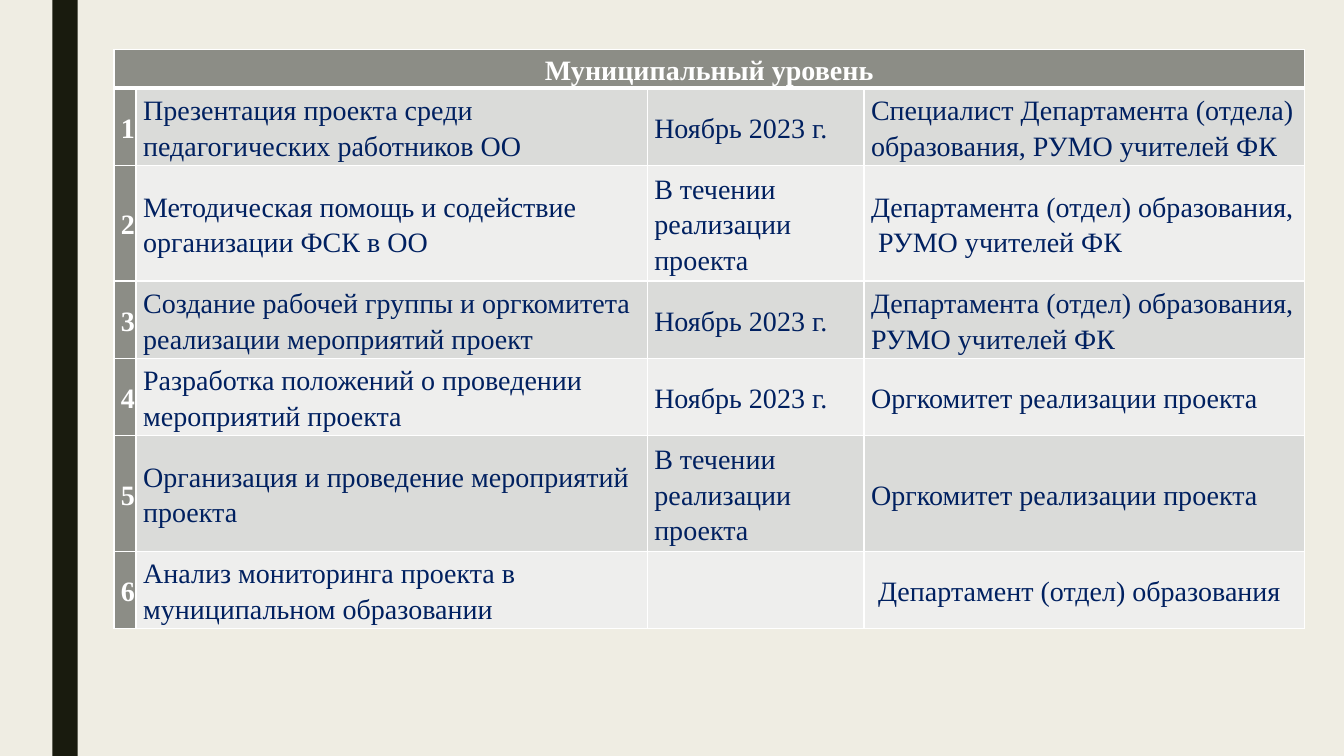
from lxml import etree
from pptx import Presentation
from pptx.dml.color import RGBColor
from pptx.enum.shapes import MSO_SHAPE
from pptx.enum.text import MSO_ANCHOR, PP_ALIGN
from pptx.oxml.ns import qn
from pptx.util import Inches, Pt

RECT = MSO_SHAPE.RECTANGLE
MIDDLE = MSO_ANCHOR.MIDDLE
LEFT, CENTER = PP_ALIGN.LEFT, PP_ALIGN.CENTER

WIDE, HIGH = 13.33, 7.5
PAPER, DARK, HEAD, INK, WHITE = "EFEDE3", "191B0E", "8C8D86", "002060", "FFFFFF"
BANDS = "DADBD9", "EEEEED"
COLS = 0.22, 5.07, 2.15, 4.37
LINE = 0.383  # height of one text line, in inches

TITLE = "Муниципальный уровень"
NOV = "Ноябрь 2023 г."
TERM = "В течении реализации проекта"
BOARD = "Оргкомитет реализации проекта"
# lines of text, task, date, who is in charge
TASKS = [
    (2, "Презентация проекта среди педагогических работников ОО", NOV,
     "Специалист Департамента (отдела) образования, РУМО учителей ФК"),
    (3, "Методическая помощь и содействие организации ФСК в ОО", TERM,
     "Департамента (отдел) образования,  РУМО учителей ФК"),
    (2, "Создание рабочей группы и оргкомитета реализации мероприятий проект", NOV,
     "Департамента (отдел) образования, РУМО учителей ФК"),
    (2, "Разработка положений о проведении мероприятий проекта", NOV, BOARD),
    (3, "Организация и проведение мероприятий проекта", TERM, BOARD),
    (2, "Анализ мониторинга проекта в муниципальном образовании", "",
     " Департамент (отдел) образования"),
]


def paint(fill, color):
    fill.solid()
    fill.fore_color.rgb = RGBColor.from_string(color)


class Page:
    font, size, space = "Times New Roman", 20, 1.15

    def __init__(self, deck):
        self.slide = deck.slides.add_slide(deck.slide_layouts[6])
        paint(self.slide.background.fill, PAPER)

    def bar(self, left, width, color):
        """Draw a band over the full height of the slide."""
        shape = self.slide.shapes.add_shape(
            RECT, Inches(left), 0, Inches(width), Inches(HIGH))
        shape.shadow.inherit = False
        paint(shape.fill, color)
        shape.line.fill.background()

    def table(self, left, top, cols, lines):
        """Add a table whose rows are as high as their count of text lines."""
        frame = self.slide.shapes.add_table(
            len(lines), len(cols), Inches(left), Inches(top),
            Inches(sum(cols)), Inches(sum(lines) * LINE))
        for col, width in zip(frame.table.columns, cols):
            col.width = Inches(width)
        for row, count in zip(frame.table.rows, lines):
            row.height = Inches(count * LINE)
        return frame.table

    def edges(self, cell, base):
        """Draw white cell borders; base is the width of the lower one."""
        props = cell._tc.get_or_add_tcPr()
        for side, width in zip("LRTB", (1, 1, 1, base)):
            line = etree.SubElement(props, qn(f"a:ln{side}"), w=str(Pt(width)))
            fill = etree.SubElement(line, qn("a:solidFill"))
            etree.SubElement(fill, qn("a:srgbClr"), val=WHITE)

    def cell(self, cell, text, color, head=False, base=1):
        self.edges(cell, base)
        paint(cell.fill, color)
        cell.vertical_anchor = MIDDLE
        cell.margin_left = cell.margin_right = Inches(0.07)
        cell.margin_top = cell.margin_bottom = 0
        cell.text = text
        para = cell.text_frame.paragraphs[0]
        para.alignment = CENTER if head else LEFT
        para.line_spacing = self.space
        font = para.font
        font.name, font.size, font.bold = self.font, Pt(self.size), head
        font.color.rgb = RGBColor.from_string(WHITE if head else INK)


def main():
    deck = Presentation()
    deck.slide_width, deck.slide_height = Inches(WIDE), Inches(HIGH)
    page = Page(deck)
    page.bar(0.52, 0.25, DARK)

    plan = page.table(1.13, 0.49, COLS, [1] + [task[0] for task in TASKS])
    for col in range(len(COLS)):
        page.cell(plan.cell(0, col), "" if col else TITLE, HEAD, True, 3)
    plan.cell(0, 0).merge(plan.cell(0, len(COLS) - 1))
    for row, (_, *texts) in enumerate(TASKS, 1):
        page.cell(plan.cell(row, 0), str(row), HEAD, True)
        for col, text in enumerate(texts, 1):
            page.cell(plan.cell(row, col), text, BANDS[(row - 1) % 2])

    deck.save("out.pptx")


if __name__ == "__main__":
    main()
